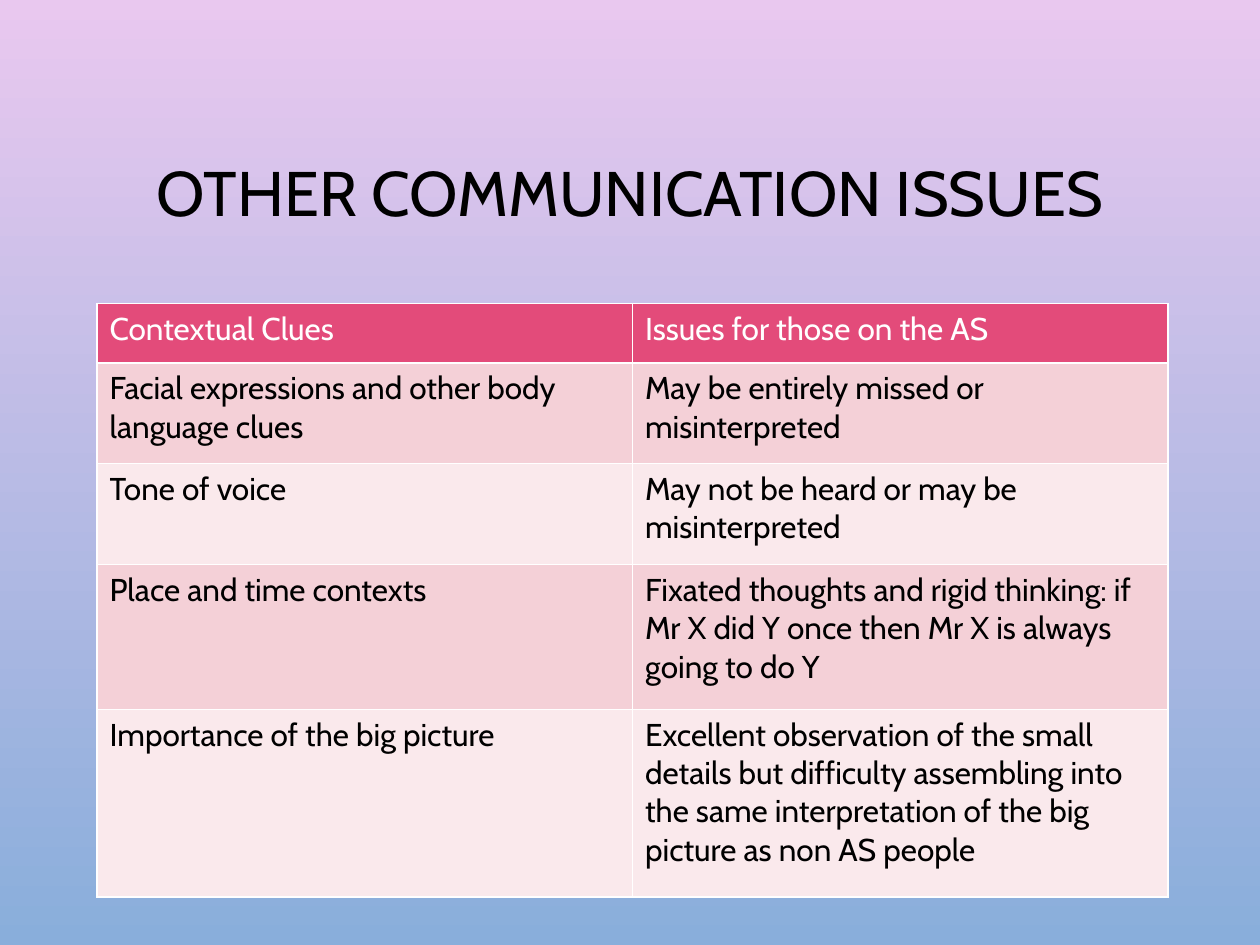
from dataclasses import dataclass

from lxml import etree
from pptx import Presentation
from pptx.dml.color import RGBColor
from pptx.enum.text import MSO_ANCHOR, PP_ALIGN
from pptx.oxml.ns import qn
from pptx.util import Inches, Pt

CENTER = PP_ALIGN.CENTER
MIDDLE = MSO_ANCHOR.MIDDLE


@dataclass(frozen=True)
class Theme:
    font: str = "Cabin"
    title_size: int = 36
    body_size: int = 18
    border_width: int = 1
    text: str = "000000"
    light: str = "FFFFFF"
    header: str = "E34B7A"
    bands: tuple = ("F4D0D7", "FAE9EC")
    background: tuple = ("E9C8EF", "89AEDB")


THEME = Theme()


def style_font(p, size, color):
    p.font.name = THEME.font
    p.font.size = Pt(size)
    p.font.bold = False
    p.font.color.rgb = RGBColor.from_string(color)


def add_borders(cell):
    """Line all four sides; the lines must come before the fill in the XML."""
    tc_pr = cell._tc.get_or_add_tcPr()
    for i, side in enumerate(("lnL", "lnR", "lnT", "lnB")):
        ln = etree.Element(qn(f"a:{side}"), w=str(Pt(THEME.border_width)))
        fill = etree.SubElement(ln, qn("a:solidFill"))
        etree.SubElement(fill, qn("a:srgbClr"), val=THEME.light)
        tc_pr.insert(i, ln)


prs = Presentation()
prs.slide_width = Inches(10)
prs.slide_height = Inches(7.5)
s = prs.slides.add_slide(prs.slide_layouts[6])

# Background
bg = s.background.fill
bg.gradient()
bg.gradient_angle = 270
for stop, position, color in zip(bg.gradient_stops, (0, 1), THEME.background):
    stop.position = position
    stop.color.rgb = RGBColor.from_string(color)

# Title
title = s.shapes.add_textbox(Inches(0.75), Inches(0.68), Inches(8.5), Inches(1.75))
tf = title.text_frame
tf.word_wrap = True
tf.vertical_anchor = MIDDLE
p = tf.paragraphs[0]
p.text = "OTHER COMMUNICATION ISSUES"
p.alignment = CENTER
p.line_spacing = 0.9
style_font(p, THEME.title_size, THEME.text)

# Table of clues and issues
ROWS = [
    (0.47, "Contextual Clues", "Issues for those on the AS"),
    (0.8, "Facial expressions and other body language clues",
     "May be entirely missed or misinterpreted"),
    (0.8, "Tone of voice", "May not be heard or may be misinterpreted"),
    (1.15, "Place and time contexts",
     "Fixated thoughts and rigid thinking: if Mr X did Y once then Mr X is always "
     "going to do Y"),
    (1.49, "Importance of the big picture",
     "Excellent observation of the small details but difficulty assembling into "
     "the same interpretation of the big picture as non AS people"),
]
table = s.shapes.add_table(
    len(ROWS), 2, Inches(0.77), Inches(2.41), Inches(8.5), Inches(4.71)
).table
for i, (height, *texts) in enumerate(ROWS):
    table.rows[i].height = Inches(height)
    fill_color = THEME.bands[(i - 1) % 2] if i else THEME.header
    text_color = THEME.text if i else THEME.light
    for j, text in enumerate(texts):
        cell = table.cell(i, j)
        cell.fill.solid()
        cell.fill.fore_color.rgb = RGBColor.from_string(fill_color)
        add_borders(cell)
        p = cell.text_frame.paragraphs[0]
        p.text = text
        style_font(p, THEME.body_size, text_color)

prs.save("out.pptx")
